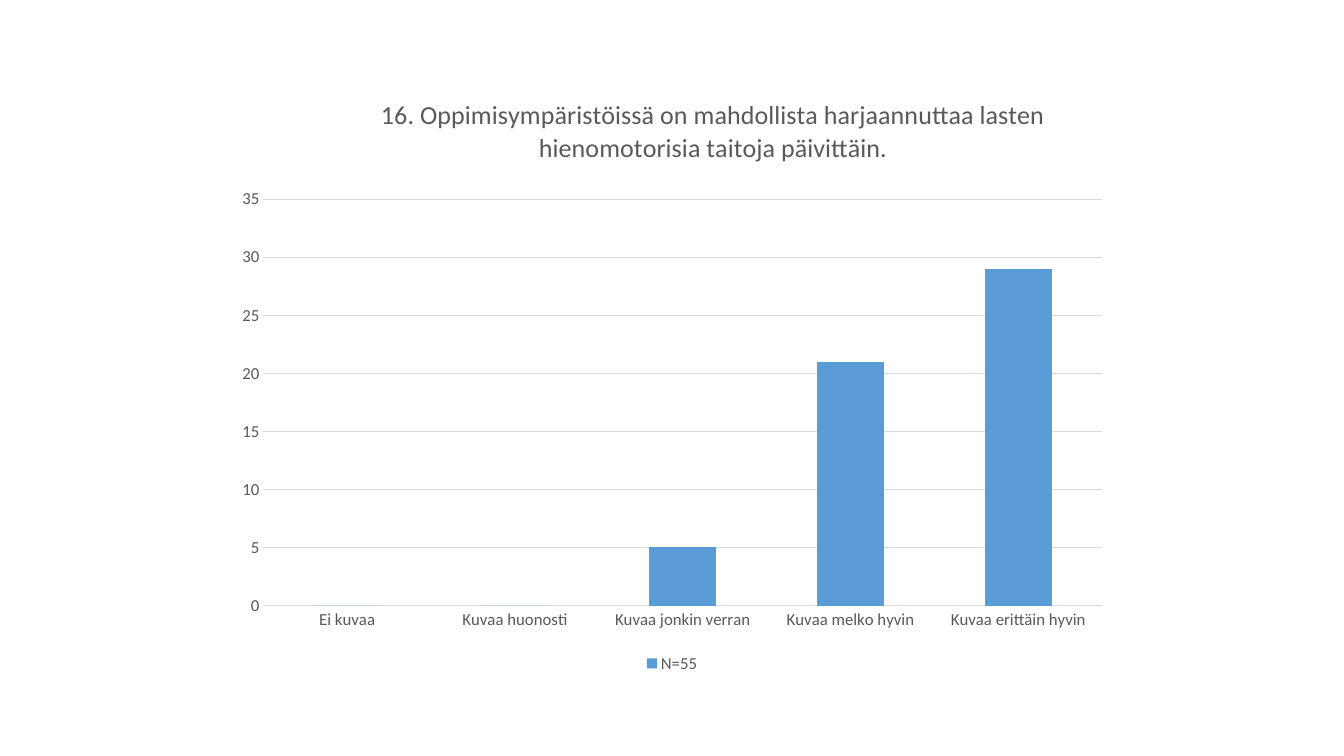
"""Build a slide with a stacked column chart of survey answers."""
from dataclasses import dataclass

from lxml.etree import SubElement
from pptx import Presentation
from pptx.chart.data import CategoryChartData
from pptx.dml.color import RGBColor
from pptx.enum.chart import XL_CHART_TYPE, XL_LEGEND_POSITION, XL_TICK_MARK
from pptx.oxml.ns import qn
from pptx.util import Inches, Pt

BAR_BLUE = RGBColor(0x5B, 0x9B, 0xD5)
TEXT_GREY = RGBColor(0x59, 0x59, 0x59)
LINE_GREY = RGBColor(0xD9, 0xD9, 0xD9)
BLACK = RGBColor(0, 0, 0)
FONT = "Calibri"
SLIDE_WIDTH, SLIDE_HEIGHT = Inches(13.33), Inches(7.5)
QUESTION = (
    "16. Oppimisympäristöissä on mahdollista harjaannuttaa lasten "
    "hienomotorisia taitoja päivittäin."
)


@dataclass(frozen=True)
class Answer:
    label: str
    count: int


ANSWERS = [
    Answer("Ei kuvaa", 0),
    Answer("Kuvaa huonosti", 0),
    Answer("Kuvaa jonkin verran", 5),
    Answer("Kuvaa melko hyvin", 21),
    Answer("Kuvaa erittäin hyvin", 29),
]


def style_font(font, size: float, color: RGBColor = TEXT_GREY) -> None:
    font.name = FONT
    font.size = Pt(size)
    font.bold = False
    font.color.rgb = color


def style_line(line) -> None:
    line.color.rgb = LINE_GREY
    line.width = Pt(0.75)


def place(element, index: int, **shares: float) -> None:
    """Fix a chart part at shares of the chart's size."""
    for old_layout in element.findall(qn("c:layout")):
        element.remove(old_layout)
    layout = SubElement(element, qn("c:layout"))
    element.insert(index, layout)
    manual = SubElement(layout, qn("c:manualLayout"))
    if "w" in shares:
        SubElement(manual, qn("c:layoutTarget"), val="inner")
    for side in ("x", "y"):
        SubElement(manual, qn(f"c:{side}Mode"), val="edge")
    for side, share in shares.items():
        SubElement(manual, qn(f"c:{side}"), val=str(share))


def add_answer_chart(slide) -> None:
    answers = CategoryChartData(number_format="General")
    answers.categories = [answer.label for answer in ANSWERS]
    answers.add_series("N=55", [answer.count for answer in ANSWERS])
    width, height = Inches(8.89), Inches(5.93)
    chart = slide.shapes.add_chart(
        XL_CHART_TYPE.COLUMN_STACKED,
        (SLIDE_WIDTH - width) // 2, Inches(0.79), width, height, answers,
    ).chart
    style_font(chart.font, 10, BLACK)

    chart.has_title = True
    heading = chart.chart_title
    heading.text_frame.text = QUESTION
    style_font(heading.text_frame.paragraphs[0].font, 18.6)
    heading.include_in_layout = False
    place(heading._element, 1, x=0.17, y=0.02)

    columns = chart.plots[0]
    columns.gap_width = 150
    columns.overlap = 100
    columns.vary_by_categories = False
    bars = columns.series[0].format
    bars.fill.solid()
    bars.fill.fore_color.rgb = BAR_BLUE
    place(chart._chartSpace.chart.plotArea, 0, x=0.044, y=0.2, w=0.936, h=0.68)

    for axis in (chart.category_axis, chart.value_axis):
        axis.major_tick_mark = XL_TICK_MARK.NONE
        axis.minor_tick_mark = XL_TICK_MARK.NONE
        style_font(axis.tick_labels.font, 12)
    style_line(chart.category_axis.format.line)
    counts = chart.value_axis
    counts.minimum_scale, counts.maximum_scale, counts.major_unit = 0, 35, 5
    counts.format.line.fill.background()
    counts.has_major_gridlines = True
    style_line(counts.major_gridlines.format.line)

    chart.has_legend = True
    chart.legend.position = XL_LEGEND_POSITION.BOTTOM
    chart.legend.include_in_layout = False
    style_font(chart.legend.font, 12)


def main() -> None:
    presentation = Presentation()
    presentation.slide_width = SLIDE_WIDTH
    presentation.slide_height = SLIDE_HEIGHT
    add_answer_chart(presentation.slides.add_slide(presentation.slide_layouts[6]))
    presentation.save("out.pptx")


if __name__ == "__main__":
    main()
